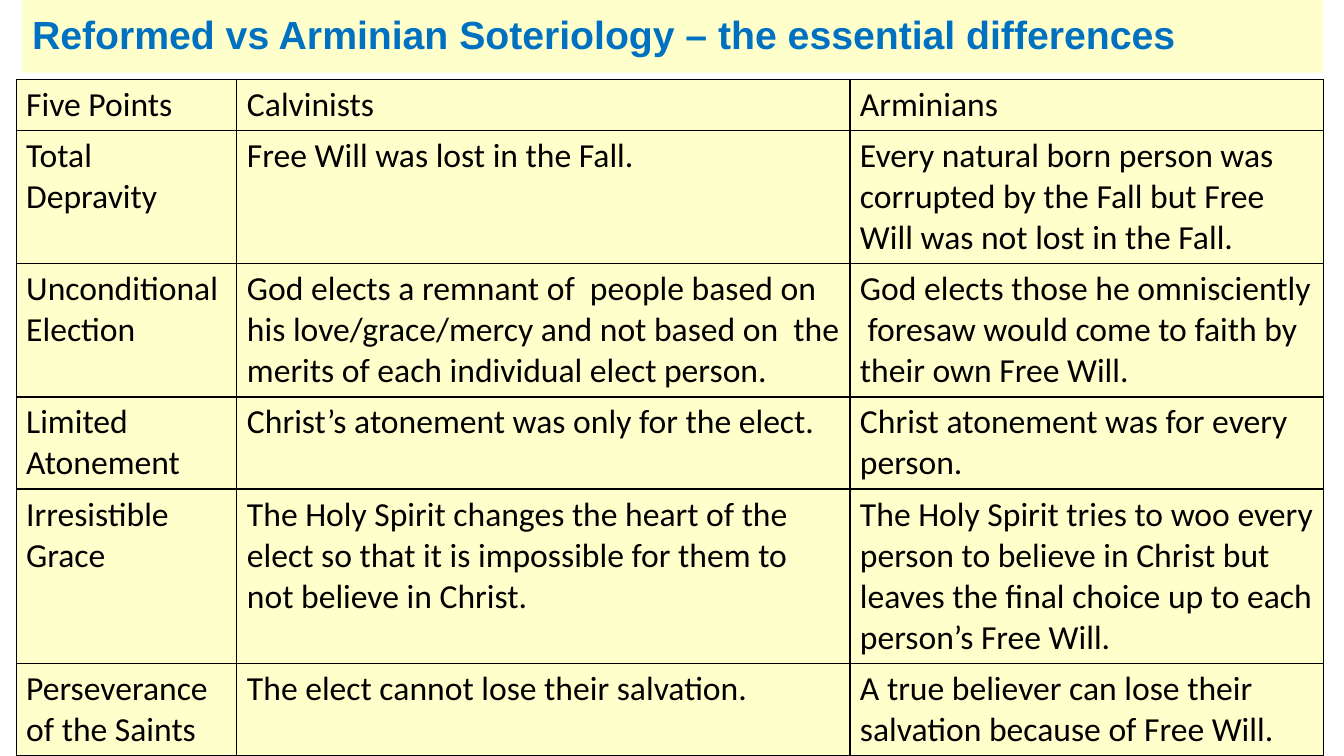
from dataclasses import dataclass

from lxml import etree
from pptx import Presentation
from pptx import util as u
from pptx.dml.color import RGBColor
from pptx.enum import shapes, text
from pptx.oxml import ns

PX = 9144
CREAM = "FFFFCC"
BLACK = "000000"
BLUE = "0070C0"


@dataclass(frozen=True)
class Point:
    name: str
    calvinist: str
    arminian: str
    height: int


COLUMN_WIDTHS = (219, 608, 470)
POINTS = (
    Point("Five Points", "Calvinists", "Arminians", 50),
    Point(
        "Total Depravity",
        "Free Will was lost in the Fall.",
        "Every natural born person was corrupted by the Fall but Free Will was not lost in the Fall.",
        131,
    ),
    Point(
        "Unconditional Election",
        "God elects a remnant of  people based on his love/grace/mercy and not based on  the "
        "merits of each individual elect person.",
        "God elects those he omnisciently  foresaw would come to faith by their own Free Will.",
        131,
    ),
    Point(
        "Limited Atonement",
        "Christ’s atonement was only for the elect.",
        "Christ atonement was for every person.",
        91,
    ),
    Point(
        "Irresistible Grace",
        "The Holy Spirit changes the heart of the elect so that it is impossible for them to "
        "not believe in Christ.",
        "The Holy Spirit tries to woo every person to believe in Christ but leaves the final "
        "choice up to each person’s Free Will.",
        172,
    ),
    Point(
        "Perseverance of the Saints",
        "The elect cannot lose their salvation.",
        "A true believer can lose their salvation because of Free Will.",
        91,
    ),
)


def px(length: int) -> int:
    return u.Emu(length * PX)


def paint(fill, color: str) -> None:
    fill.solid()
    fill.fore_color.rgb = RGBColor.from_string(color)


def write(frame, words: str, *, size: int, font: str, color: str,
          bold: bool = False, spacing: float = 1.0) -> None:
    frame.word_wrap = True
    paragraph = frame.paragraphs[0]
    paragraph.alignment = text.PP_ALIGN.LEFT
    paragraph.line_spacing = spacing
    run = paragraph.add_run()
    run.text = words
    run.font.size = u.Pt(size)
    run.font.name = font
    run.font.bold = bold
    paint(run.font.fill, color)


def add_borders(cell, color: str) -> None:
    properties = cell._tc.get_or_add_tcPr()
    for position, side in enumerate(("lnL", "lnR", "lnT", "lnB")):
        border = etree.Element(ns.qn(f"a:{side}"), w=str(u.Pt(1)))
        solid = etree.SubElement(border, ns.qn("a:solidFill"))
        etree.SubElement(solid, ns.qn("a:srgbClr"), val=color)
        properties.insert(position, border)


def add_heading(slide) -> None:
    heading = slide.shapes.add_shape(
        shapes.MSO_SHAPE.RECTANGLE, px(22), px(0), px(1290), px(72))
    heading.shadow.inherit = False
    heading.line.fill.background()
    paint(heading.fill, CREAM)
    heading.text_frame.vertical_anchor = text.MSO_ANCHOR.MIDDLE
    write(heading.text_frame, "Reformed vs Arminian Soteriology – the essential differences",
          size=28, font="Arial", color=BLUE, bold=True, spacing=0.9)


def add_comparison(slide, points: tuple[Point, ...]) -> None:
    comparison = slide.shapes.add_table(
        len(points), len(COLUMN_WIDTHS), px(16), px(79),
        px(sum(COLUMN_WIDTHS)), px(sum(point.height for point in points))).table
    for column, width in zip(comparison.columns, COLUMN_WIDTHS):
        column.width = px(width)
    for row, point in zip(comparison.rows, points):
        row.height = px(point.height)
        for cell, words in zip(row.cells, (point.name, point.calvinist, point.arminian)):
            paint(cell.fill, CREAM)
            add_borders(cell, BLACK)
            write(cell.text_frame, words, size=24, font="Calibri", color=BLACK)


def main() -> None:
    deck = Presentation()
    deck.slide_width, deck.slide_height = px(1333), px(750)
    slide = deck.slides.add_slide(deck.slide_layouts[6])
    add_heading(slide)
    add_comparison(slide, POINTS)
    deck.save("out.pptx")


if __name__ == "__main__":
    main()
